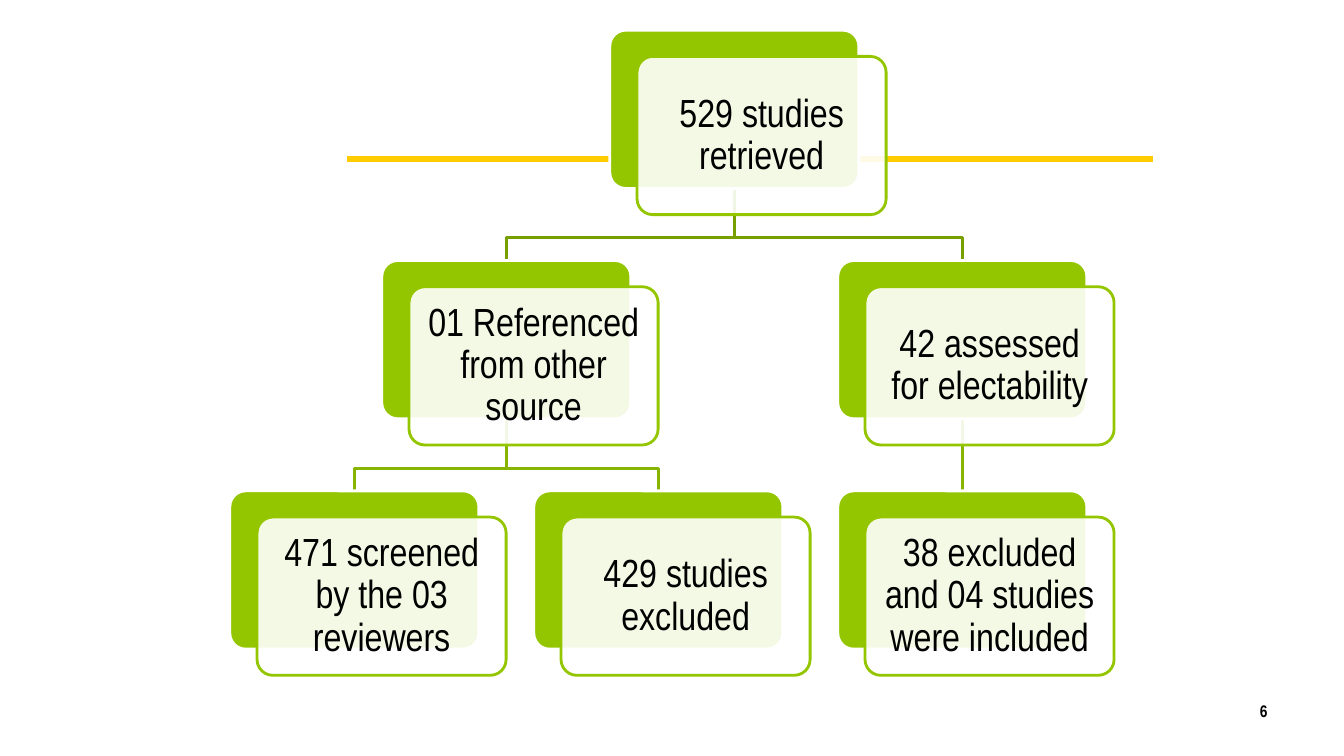
from lxml import etree
from pptx import Presentation
from pptx import util as u
from pptx.dml.color import RGBColor
from pptx.enum import shapes, text
from pptx.oxml.ns import qn

FONT = "Arial Narrow"
GREEN, WHITE, BLACK, GOLD = "94C600", "FFFFFF", "000000", "FFCC00"
LINK_UPPER, LINK_LOWER = "779F00", "86B400"
BOX_WIDTH, BOX_HEIGHT = 2.47, 1.57
CARD_SHIFT_X, CARD_SHIFT_Y = 0.27, 0.26
LINK_BEND = 0.49

# Each parent is centred over its children, and the rows are equally spaced.
LEFT, RIGHT = 2.28, 8.31
MIDDLE = (LEFT + RIGHT) / 2
REFERENCED = (LEFT + MIDDLE) / 2
ROOT = (REFERENCED + RIGHT) / 2
TOP, BOTTOM = 0.3, 4.87
SECOND = (TOP + BOTTOM) / 2

NODES = {
    "retrieved": (ROOT, TOP, "529 studies retrieved"),
    "referenced": (REFERENCED, SECOND, "01 Referenced from other source"),
    "screened": (LEFT, BOTTOM, "471 screened by the 03 reviewers"),
    "rejected": (MIDDLE, BOTTOM, "429 studies excluded"),
    "assessed": (RIGHT, SECOND, "42 assessed for electability"),
    "included": (RIGHT, BOTTOM, "38 excluded and 04 studies were included"),
}
LINKS = [
    ("assessed", "included", LINK_LOWER),
    ("retrieved", "assessed", LINK_UPPER),
    ("referenced", "rejected", LINK_LOWER),
    ("referenced", "screened", LINK_LOWER),
    ("retrieved", "referenced", LINK_UPPER),
]


def rgb(value):
    return RGBColor.from_string(value)


def set_format(target, values):
    for name, value in values.items():
        setattr(target, name, value)


def set_line(shape, color, width):
    shape.line.color.rgb = rgb(color)
    shape.line.width = u.Pt(width)


def write_text(shape, content, frame_format, paragraph_format, font_format):
    frame = shape.text_frame
    set_format(frame, {"word_wrap": True,
                       "vertical_anchor": text.MSO_ANCHOR.MIDDLE, **frame_format})
    paragraph = frame.paragraphs[0]
    paragraph.text = content
    set_format(paragraph, paragraph_format)
    set_format(paragraph.font, {"name": FONT, **font_format})
    paragraph.font.color.rgb = rgb(BLACK)


def add_round_box(slide, left, top, fill, line):
    box = slide.shapes.add_shape(
        shapes.MSO_SHAPE.ROUNDED_RECTANGLE, u.Inches(left), u.Inches(top),
        u.Inches(BOX_WIDTH), u.Inches(BOX_HEIGHT))
    box.adjustments[0] = 0.1
    box.shadow.inherit = False
    box.fill.solid()
    box.fill.fore_color.rgb = rgb(fill)
    set_line(box, line, 2)
    return box


def add_node(slide, left, top, content):
    """Add a green box with a translucent text card over it; return the green box."""
    back = add_round_box(slide, left, top, GREEN, WHITE)
    card = add_round_box(slide, left + CARD_SHIFT_X, top + CARD_SHIFT_Y, WHITE, GREEN)
    color = card.fill._xPr.find(qn("a:solidFill"))[0]
    etree.SubElement(color, qn("a:alpha"), val="90000")
    margin = u.Inches(0.12)
    write_text(card, content,
               {f"margin_{side}": margin for side in ("left", "right", "top", "bottom")},
               {"alignment": text.PP_ALIGN.CENTER, "line_spacing": 0.9},
               {"size": u.Pt(28)})
    return back


def add_straight_line(slide, start, end, color, width):
    line = slide.shapes.add_connector(
        shapes.MSO_CONNECTOR.STRAIGHT, *(u.Inches(n) for n in (*start, *end)))
    set_line(line, color, width)
    etree.SubElement(line._element.spPr, qn("a:effectLst"))
    return line


def add_bent_line(slide, start, end, color, width):
    bend = start[1] + LINK_BEND
    points = [start, (start[0], bend), (end[0], bend), end]
    points = [(u.Inches(x), u.Inches(y)) for x, y in points]
    builder = slide.shapes.build_freeform(*points[0])
    builder.add_line_segments(points[1:], close=False)
    line = builder.convert_to_shape()
    line.shadow.inherit = False
    line.fill.background()
    set_line(line, color, width)
    return line


def add_link(slide, boxes, parent, child, color):
    """Join the bottom of the parent box to the top of the child box."""
    parent_left, parent_top, _ = NODES[parent]
    child_left, child_top, _ = NODES[child]
    start = (parent_left + BOX_WIDTH / 2, parent_top + BOX_HEIGHT)
    end = (child_left + BOX_WIDTH / 2, child_top)
    if parent_left == child_left:
        link = add_straight_line(slide, start, end, color, 2)
        link.begin_connect(boxes[parent], 2)
        link.end_connect(boxes[child], 0)
    else:
        link = add_bent_line(slide, start, end, color, 2)
    # Links lie behind every box.
    boxes["retrieved"]._element.addprevious(link._element)


def add_page_number(slide, number):
    box = slide.shapes.add_textbox(
        u.Inches(9.56), u.Inches(6.85), u.Inches(3.11), u.Inches(0.4))
    write_text(box, number, {}, {"alignment": text.PP_ALIGN.RIGHT},
               {"size": u.Pt(12), "bold": True})


def main():
    presentation = Presentation()
    presentation.slide_width = u.Inches(13.33)
    presentation.slide_height = u.Inches(7.5)
    slide = presentation.slides.add_slide(presentation.slide_layouts[6])

    add_straight_line(slide, (3.44, 1.58), (11.44, 1.58), GOLD, 4.5)
    boxes = {name: add_node(slide, *node) for name, node in NODES.items()}
    for parent, child, color in LINKS:
        add_link(slide, boxes, parent, child, color)
    add_page_number(slide, "6")

    presentation.save("out.pptx")


if __name__ == "__main__":
    main()
